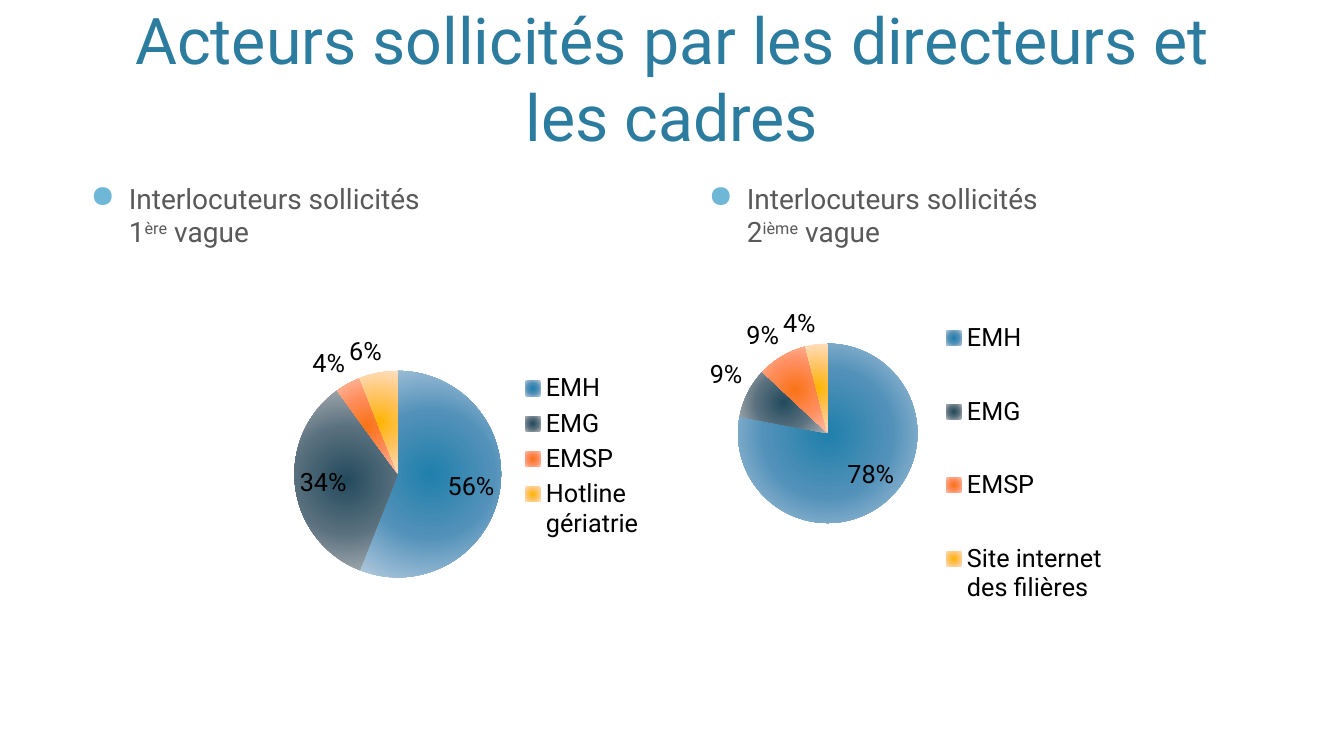
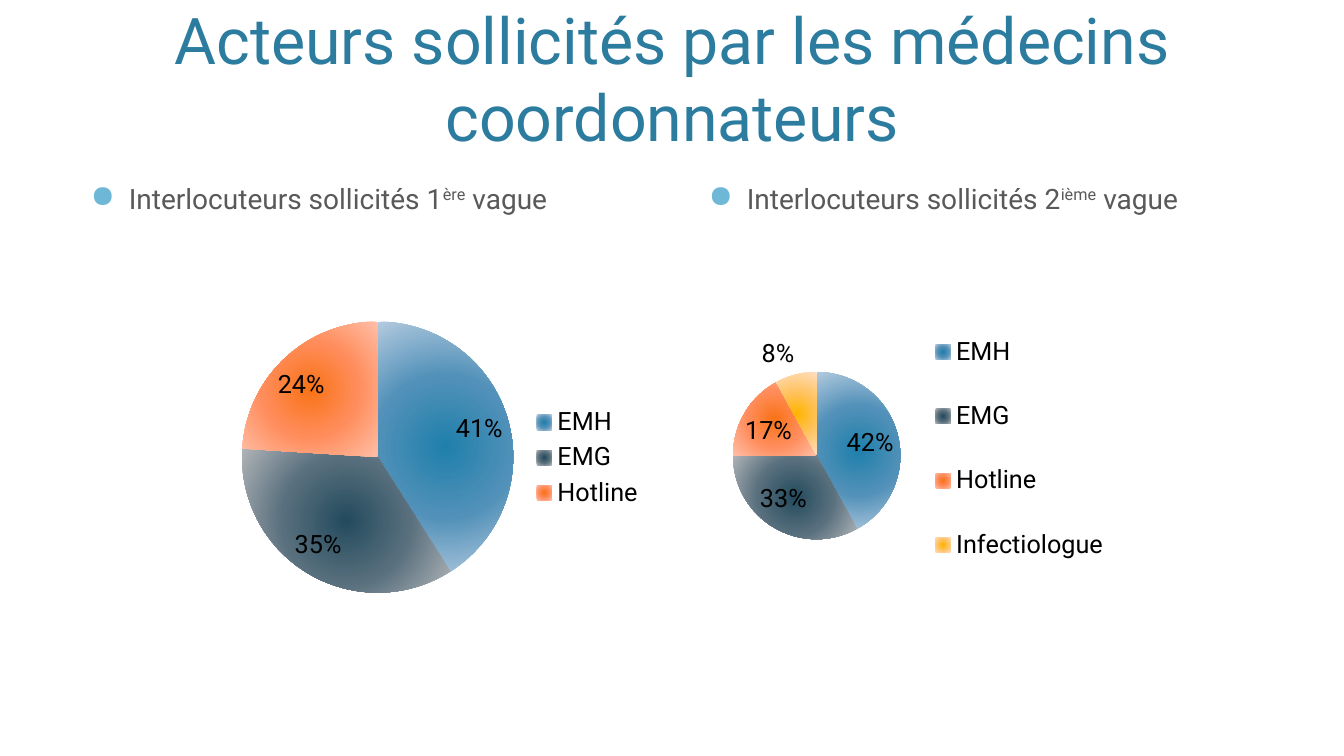
from lxml import etree
from pptx import Presentation
from pptx.chart.data import CategoryChartData
from pptx.dml.color import RGBColor
from pptx.enum.chart import XL_CHART_TYPE, XL_LABEL_POSITION as LABEL_AT, XL_LEGEND_POSITION as LEGEND_AT
from pptx.enum.text import MSO_ANCHOR, PP_ALIGN
from pptx.oxml import parse_xml
from pptx.oxml.ns import nsdecls, qn
from pptx.util import Inches, Pt

FONT = "Roboto"
COLORS = {"title": "2C7C9F", "body": "595959", "bullet": "6FB7D7", "chart": "000000"}
# Centre, middle and rim of each slice's radial gradient
SLICES = [
    ("1F80AB", "5291B9", "B4CBDF"),
    ("234B5E", "586F7D", "B0B4B8"),
    ("F97316", "FF8D5C", "FFBFA8"),
    ("FFB400", "FFC465", "FFDFC0"),
]
TITLE_BOX = (0.8, 0.12, 11.73, 1.46)
BODY_BOXES = [(0.8, 1.75, 5.6, 4.75), (6.93, 1.75, 5.6, 4.75)]
CHART_BOXES = [(2.27, 2.57, 4.2, 3.93), (6.86, 2.57, 4.2, 3.93)]

# Each wave: heading lead, ordinal suffix, slices, then the pie and legend
# boxes in inches from the chart's corner
SLIDES = [
    ("Acteurs sollicités par les directeurs et les cadres", [
        ("Interlocuteurs sollicités\v1", "ère",
         {"EMH": 56, "EMG": 34, "EMSP": 4, "Hotline gériatrie": 6},
         (0.65, 1.11, 2.05, 2.05), (2.85, 1.08, 1.3, 1.75)),
        ("Interlocuteurs sollicités\v2", "ième",
         {"EMH": 78, "EMG": 9, "EMSP": 9, "Site internet des filières": 4},
         (0.46, 0.84, 1.78, 1.78), (2.51, 0.2, 1.63, 3.65)),
    ]),
    ("Acteurs sollicités par les médecins coordonnateurs", [
        ("Interlocuteurs sollicités 1", "ère",
         {"EMH": 41, "EMG": 35, "Hotline": 24},
         (0.13, 0.62, 2.69, 2.69), (2.97, 1.42, 1.17, 1.1)),
        ("Interlocuteurs sollicités 2", "ième",
         {"EMH": 42, "EMG": 33, "Hotline": 17, "Infectiologue": 8},
         (0.41, 1.12, 1.66, 1.66), (2.36, 0.43, 1.78, 2.9)),
    ]),
]


def style_font(font, size, color):
    font.name = FONT
    font.size = Pt(size)
    font.color.rgb = RGBColor.from_string(COLORS[color])


def add_text_frame(page, box):
    frame = page.shapes.add_textbox(*map(Inches, box)).text_frame
    frame.word_wrap = True
    return frame


def add_title(page, box, text):
    frame = add_text_frame(page, box)
    frame.vertical_anchor = MSO_ANCHOR.BOTTOM
    para = frame.paragraphs[0]
    para.text = text
    para.alignment = PP_ALIGN.CENTER
    style_font(para.font, 46, "title")


def add_bullet(para):
    props = para._p.get_or_add_pPr()
    props.set("marL", str(Inches(0.38)))
    props.set("indent", str(-Inches(0.38)))
    marks = (
        f'<a:buClr {nsdecls("a")}><a:srgbClr val="{COLORS["bullet"]}"/></a:buClr>',
        f'<a:buSzPct {nsdecls("a")} val="110000"/>',
        f'<a:buChar {nsdecls("a")} char="●"/>',
    )
    # Bullet marks must come before the default run properties
    for mark in marks:
        props.insert_element_before(parse_xml(mark), "a:defRPr")


def add_wave_heading(page, box, lead, suffix):
    para = add_text_frame(page, box).paragraphs[0]
    para.text = lead
    for text in (suffix, " vague"):
        span = para.add_run()
        span.text = text
        if text == suffix:
            span.font._element.set("baseline", "30000")
    para.space_before = Pt(16)
    style_font(para.font, 20, "body")
    add_bullet(para)


def fill_radial(point, stops):
    """Fill a slice with a gradient running from its centre to its rim."""
    steps = "".join(
        f'<a:gs pos="{50000 * rank}"><a:srgbClr val="{color}"/></a:gs>'
        for rank, color in enumerate(stops))
    point.format.line.fill.background()
    outline = point.format.line._get_or_add_ln()
    outline.addprevious(parse_xml(
        f'<a:gradFill {nsdecls("a")} rotWithShape="1"><a:gsLst>{steps}</a:gsLst>'
        '<a:path path="circle"><a:fillToRect l="50000" t="50000" r="50000" b="50000"/>'
        '</a:path></a:gradFill>'))


def set_layout(element, box, size, followers, inner=False):
    """Pin a chart part to a box given in inches within the chart's size."""
    for old in element.findall(qn("c:layout")):
        element.remove(old)
    layout = etree.Element(qn("c:layout"))
    manual = etree.SubElement(layout, qn("c:manualLayout"))
    if inner:
        etree.SubElement(manual, qn("c:layoutTarget")).set("val", "inner")
    for name in ("xMode", "yMode"):
        etree.SubElement(manual, qn(f"c:{name}")).set("val", "edge")
    for name, length, whole in zip("xywh", box, size * 2):
        etree.SubElement(manual, qn(f"c:{name}")).set("val", f"{length / whole:.4f}")
    next(child for child in element if child.tag in map(qn, followers)).addprevious(layout)


def add_pie(page, box, shares, pie_box, legend_box):
    data = CategoryChartData()
    data.categories = list(shares)
    data.add_series("Series 1", list(shares.values()))
    chart = page.shapes.add_chart(XL_CHART_TYPE.PIE, *map(Inches, box), data).chart
    chart.has_title = False
    style_font(chart.font, 18, "chart")

    chart.has_legend = True
    chart.legend.position = LEGEND_AT.RIGHT
    chart.legend.include_in_layout = False

    plot = chart.plots[0]
    plot.vary_by_categories = True
    plot.has_data_labels = True
    labels = plot.data_labels
    labels.show_value = False
    labels.show_percentage = True
    labels.number_format = "0%"
    labels.number_format_is_linked = False
    labels.position = LABEL_AT.BEST_FIT
    style_font(labels.font, 18, "chart")
    for index, stops in enumerate(SLICES[:len(shares)]):
        fill_radial(plot.series[0].points[index], stops)

    plot_area = chart._chartSpace.chart.plotArea
    set_layout(plot_area, pie_box, box[2:], ["c:pieChart"], inner=True)
    set_layout(chart.legend._element, legend_box, box[2:], ["c:overlay", "c:txPr"])


def add_comparison_slide(deck, title, waves):
    page = deck.slides.add_slide(deck.slide_layouts[6])
    add_title(page, TITLE_BOX, title)
    for body_box, chart_box, wave in zip(BODY_BOXES, CHART_BOXES, waves):
        lead, suffix, *pie = wave
        add_wave_heading(page, body_box, lead, suffix)
        add_pie(page, chart_box, *pie)


def main():
    deck = Presentation()
    deck.slide_width, deck.slide_height = Inches(13.33), Inches(7.5)
    for title, waves in SLIDES:
        add_comparison_slide(deck, title, waves)
    deck.save("out.pptx")


if __name__ == "__main__":
    main()
